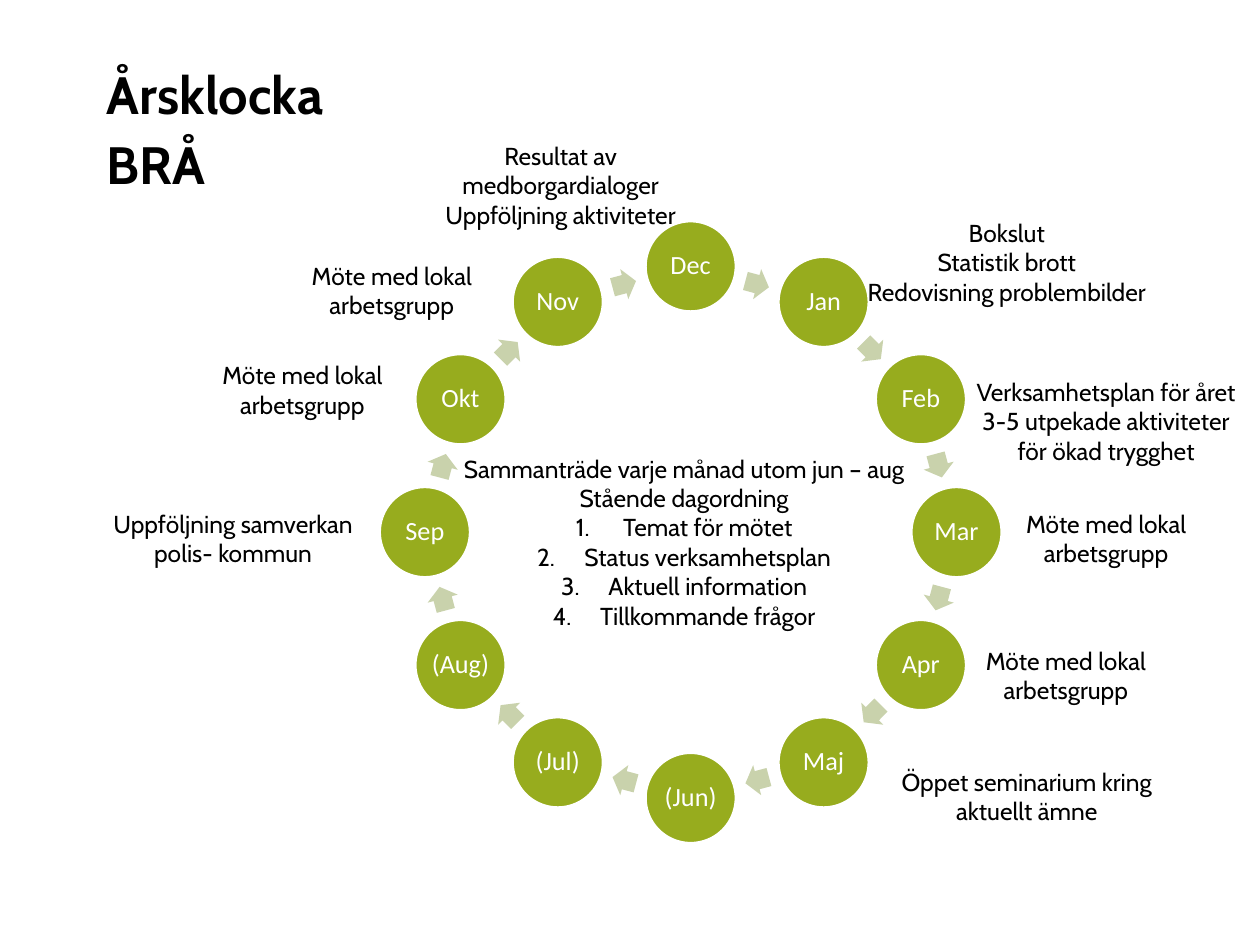
from dataclasses import dataclass
from math import cos, radians, sin

from lxml.etree import SubElement
from pptx import Presentation
from pptx.dml.color import RGBColor
from pptx.enum.shapes import MSO_SHAPE
from pptx.enum.text import MSO_ANCHOR, PP_ALIGN
from pptx.oxml.ns import qn
from pptx.util import Pt


@dataclass(frozen=True)
class Theme:
    green: RGBColor = RGBColor(0x97, 0xAC, 0x1E)
    pale: RGBColor = RGBColor(0xC9, 0xD2, 0xAC)
    white: RGBColor = RGBColor(0xFF, 0xFF, 0xFF)
    black: RGBColor = RGBColor(0, 0, 0)
    title: int = 30
    month: int = 15
    label: int = 14
    font: str = "Cabin"
    month_font: str = "Calibri"


theme = Theme()


def write(sp, text, size=theme.label, font=theme.font, color=theme.black, bold=False,
          align=PP_ALIGN.CENTER, anchor=MSO_ANCHOR.TOP, spacing=None, wrap=True, margin=None):
    """Fill sp with one paragraph per line; lines that start with '#' are numbered."""
    tf = sp.text_frame
    tf.word_wrap = wrap
    tf.vertical_anchor = anchor
    if margin is not None:
        tf.margin_left = tf.margin_right = tf.margin_top = tf.margin_bottom = Pt(margin)
    for i, line in enumerate(text.split("\n")):
        p = tf.paragraphs[0] if i == 0 else tf.add_paragraph()
        p.text = line.removeprefix("#")
        p.alignment = align
        if spacing:
            p.line_spacing = spacing
        if line.startswith("#"):
            pPr = p._p.get_or_add_pPr()
            pPr.set("marL", str(Pt(27)))
            pPr.set("indent", str(-Pt(27)))
            SubElement(pPr, qn("a:buFont"), typeface="+mj-lt")
            SubElement(pPr, qn("a:buAutoNum"), type="arabicPeriod")
        for r in p.runs:
            r.font.size = Pt(size)
            r.font.name = font
            r.font.bold = bold
            r.font.color.rgb = color


def add_on_ring(kind, angle, radius, width, height, fill):
    """Centre a shape on the ring, with angle in degrees clockwise from the top."""
    x = CENTER_X + radius * sin(radians(angle))
    y = CENTER_Y - radius * cos(radians(angle))
    sp = s.shapes.add_shape(kind, Pt(x - width / 2), Pt(y - height / 2), Pt(width), Pt(height))
    sp.shadow.inherit = False
    sp.fill.solid()
    sp.fill.fore_color.rgb = fill
    return sp


prs = Presentation()
prs.slide_width, prs.slide_height = Pt(720), Pt(540)
s = prs.slides.add_slide(prs.slide_layouts[6])

title = s.shapes.add_textbox(Pt(54), Pt(26.6), Pt(611.3), Pt(90))
write(title, "Årsklocka\vBRÅ", size=theme.title, bold=True, align=PP_ALIGN.LEFT,
      anchor=MSO_ANCHOR.MIDDLE, spacing=Pt(40))

# Year ring: a circle for each month and an arrow to the next one
CENTER_X, CENTER_Y = 394.7, 304.1
MONTH_RADIUS, ARROW_RADIUS = 151.9, 146.7
months = ["Dec", "Jan", "Feb", "Mar", "Apr", "Maj",
          "(Jun)", "(Jul)", "(Aug)", "Sep", "Okt", "Nov"]
step = 360 / len(months)

for i, month in enumerate(months):
    circle = add_on_ring(MSO_SHAPE.OVAL, i * step, MONTH_RADIUS, 52.2, 52.2, theme.green)
    circle.line.color.rgb = theme.white
    circle.line.width = Pt(2)
    write(circle, month, size=theme.month, font=theme.month_font, color=theme.white,
          anchor=MSO_ANCHOR.MIDDLE, spacing=0.9, wrap=False, margin=1.5)

    angle = (i + 0.5) * step
    arrow = add_on_ring(MSO_SHAPE.RIGHT_ARROW, angle, ARROW_RADIUS, 13.9, 17.8, theme.pale)
    arrow.adjustments[0], arrow.adjustments[1] = 0.6, 0.5
    arrow.rotation = angle
    arrow.line.fill.background()

agenda = s.shapes.add_textbox(Pt(257.8), Pt(255.6), Pt(266.4), Pt(108.7))
write(agenda, "Sammanträde varje månad utom jun – aug\nStående dagordning\n"
              "#Temat för mötet\n#Status verksamhetsplan\n"
              "#Aktuell information\n#Tillkommande frågor")

# Activities around the ring: left, top, height, text
LABEL_WIDTH = 181.4
TWO_LINES, THREE_LINES = 41, 58.3
local_meeting = "Möte med lokal\narbetsgrupp"
activities = [
    (541.4, 287.3, TWO_LINES, local_meeting),
    (518.4, 365.4, TWO_LINES, local_meeting),
    (82.1, 202.3, TWO_LINES, local_meeting),
    (133.2, 145.4, TWO_LINES, local_meeting),
    (541.4, 211.9, THREE_LINES,
     "Verksamhetsplan för året\n3-5 utpekade aktiviteter\nför ökad trygghet"),
    (484.6, 121, THREE_LINES, "Bokslut\nStatistik brott\nRedovisning problembilder"),
    (229.7, 77, THREE_LINES, "Resultat av medborgardialoger\nUppföljning aktiviteter"),
    (496.1, 434.5, TWO_LINES, "Öppet seminarium kring aktuellt ämne"),
    (42.5, 287.3, TWO_LINES, "Uppföljning samverkan polis- kommun"),
]
for left, top, height, text in activities:
    write(s.shapes.add_textbox(Pt(left), Pt(top), Pt(LABEL_WIDTH), Pt(height)), text)

prs.save("out.pptx")
